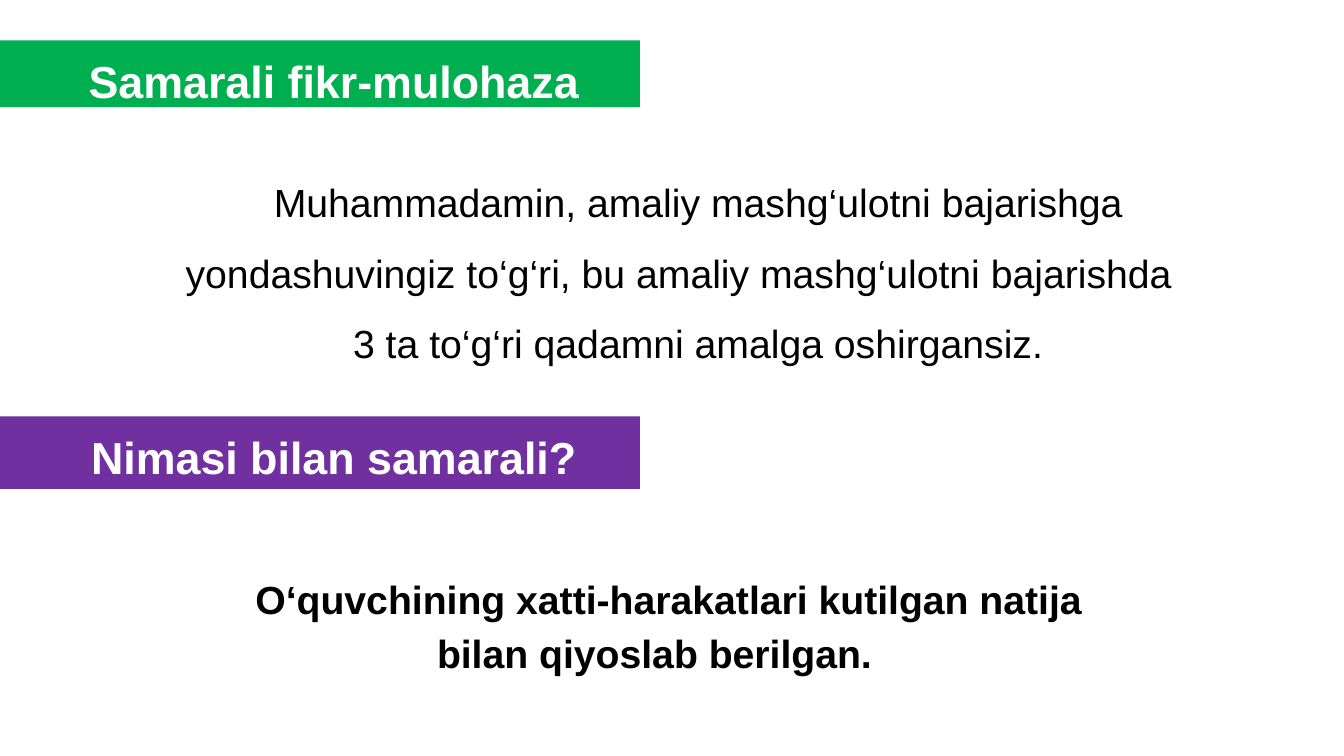
import dataclasses

import pptx
import pptx.dml.color
import pptx.enum.shapes
import pptx.enum.text
import pptx.util

Cm = pptx.util.Cm
Color = pptx.dml.color.RGBColor


@dataclasses.dataclass(frozen=True)
class Theme:
    font: str = "Arial"
    heading_size: int = 32
    body_size: int = 28
    praise: Color = Color.from_string("00B050")
    reason: Color = Color.from_string("7030A0")
    light: Color = Color.from_string("FFFFFF")
    dark: Color = Color.from_string("000000")
    first_line_indent: int = Cm(0.71)


THEME = Theme()


def apply_format(target, values):
    for name, value in values.items():
        setattr(target, name, value)


def write_text(shape, lines, size, color, bold, line_spacing):
    frame = shape.text_frame
    apply_format(frame, {
        "word_wrap": True,
        "auto_size": pptx.enum.text.MSO_AUTO_SIZE.SHAPE_TO_FIT_TEXT,
        "vertical_anchor": pptx.enum.text.MSO_ANCHOR.TOP,
        "text": "\n".join(lines),
    })
    for paragraph in frame.paragraphs:
        apply_format(paragraph, {
            "alignment": pptx.enum.text.PP_ALIGN.CENTER,
            "line_spacing": line_spacing,
        })
        properties = paragraph._p.get_or_add_pPr()
        properties.set("marL", "0")
        properties.set("indent", str(THEME.first_line_indent))
        for run in paragraph.runs:
            apply_format(run.font, {
                "name": THEME.font,
                "size": pptx.util.Pt(size),
                "bold": bold,
            })
            run.font.color.rgb = color


def add_banner(slide, box, heading, fill):
    banner = slide.shapes.add_shape(
        pptx.enum.shapes.MSO_SHAPE.RECTANGLE, *map(Cm, box))
    banner.shadow.inherit = False
    banner.fill.solid()
    banner.fill.fore_color.rgb = fill
    banner.line.fill.background()
    write_text(banner, [heading], THEME.heading_size, THEME.light, True, 1.15)


def add_statement(slide, box, lines, bold, line_spacing):
    statement = slide.shapes.add_textbox(*map(Cm, box))
    write_text(statement, lines, THEME.body_size, THEME.dark, bold, line_spacing)


def add_feedback_slide(presentation):
    slide = presentation.slides.add_slide(presentation.slide_layouts[6])
    banner_width = 16.13
    add_banner(slide, (0, 1.02, banner_width, 1.68),
               "Samarali fikr-mulohaza", THEME.praise)
    add_statement(slide, (3.94, 3.78, 26.59, 5.41), [
        "Muhammadamin, amaliy mashg‘ulotni bajarishga yondashuvingiz "
        "to‘g‘ri, bu amaliy mashg‘ulotni bajarishda ",
        "3 ta to‘g‘ri qadamni amalga oshirgansiz.",
    ], False, 1.5)
    add_banner(slide, (0, 10.49, banner_width, 1.83),
               "Nimasi bilan samarali?", THEME.reason)
    add_statement(slide, (5.13, 14.2, 22.73, 2.9), [
        "O‘quvchining xatti-harakatlari kutilgan natija "
        "bilan qiyoslab berilgan.",
    ], True, 1.15)


def main():
    presentation = pptx.Presentation()
    apply_format(presentation, {
        "slide_width": Cm(33.87),
        "slide_height": Cm(19.05),
    })
    add_feedback_slide(presentation)
    presentation.save("out.pptx")


if __name__ == "__main__":
    main()
